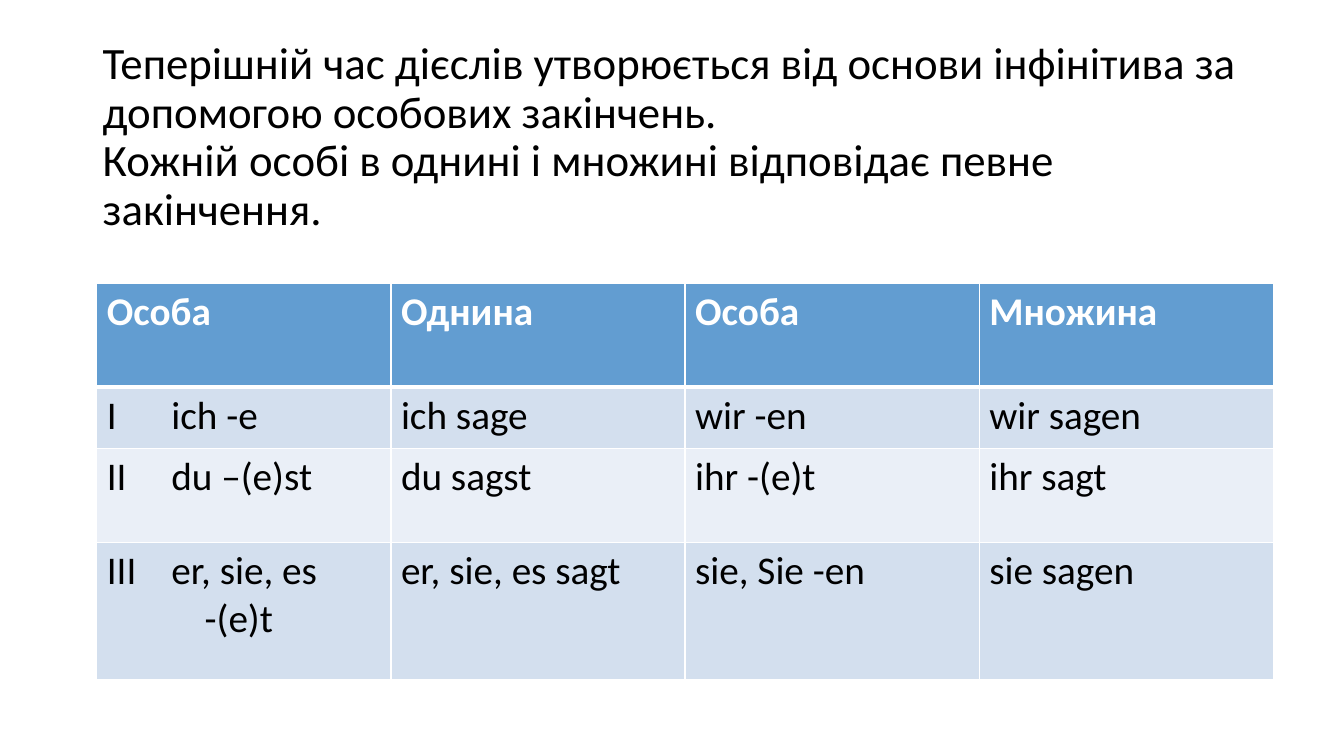
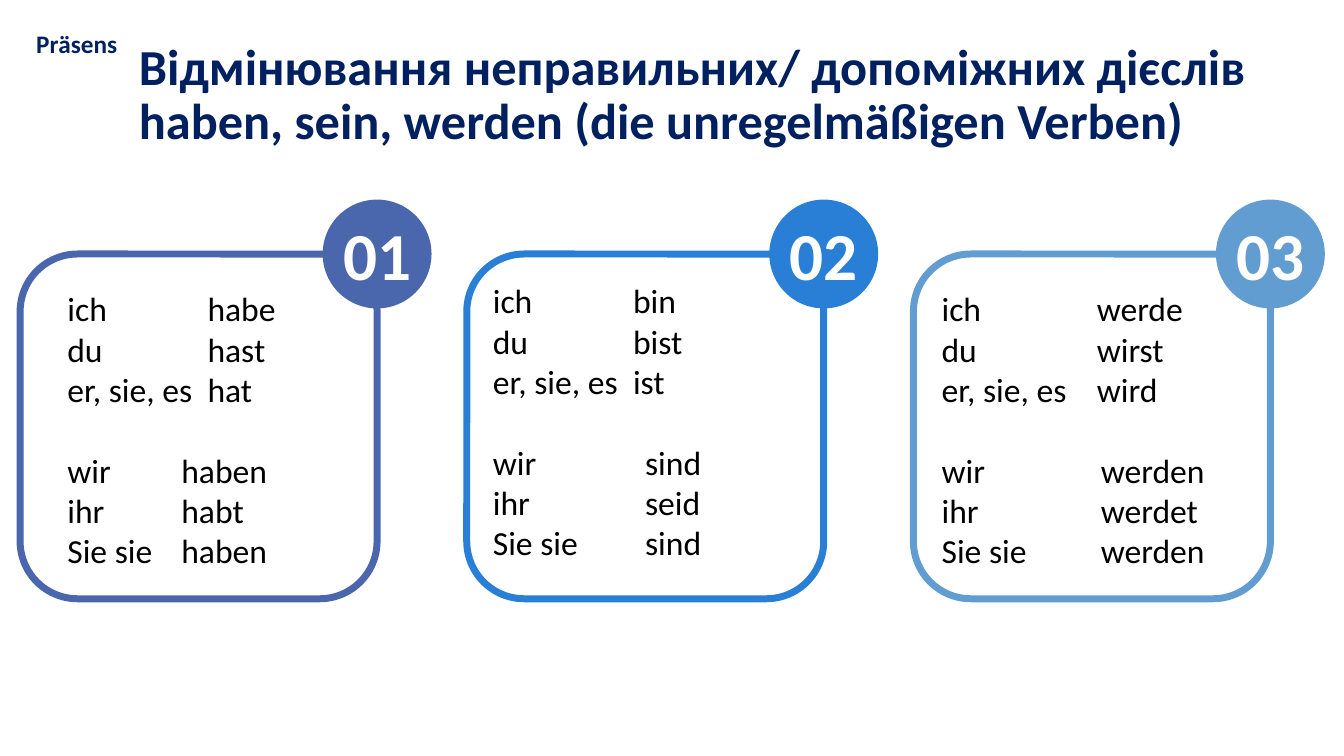
import pptx
import pptx.dml.color
import pptx.enum.shapes
import pptx.enum.text
import pptx.oxml
import pptx.oxml.ns
import pptx.util

RGBColor = pptx.dml.color.RGBColor
BLACK = RGBColor(0x00, 0x00, 0x00)
WHITE = RGBColor(0xFF, 0xFF, 0xFF)
NAVY = RGBColor(0x00, 0x20, 0x60)
INDIGO = RGBColor(0x4A, 0x66, 0xAC)
BLUE = RGBColor(0x29, 0x7F, 0xD5)
SKY = RGBColor(0x62, 0x9D, 0xD1)
BAND_DARK = RGBColor(0xD3, 0xDF, 0xEE)
BAND_LIGHT = RGBColor(0xEA, 0xEF, 0xF7)

PX = 9144  # 100 px to the inch
FONT = "Calibri"
MIDDLE = pptx.enum.text.MSO_ANCHOR.MIDDLE
CENTER = pptx.enum.text.PP_ALIGN.CENTER
SHAPES = pptx.enum.shapes.MSO_SHAPE


def px(*lengths):
    return [pptx.util.Emu(length * PX) for length in lengths]


class Deck:
    """Holds the shared style and the current slide."""

    def __init__(self, width, height):
        self.presentation = pptx.Presentation()
        self.presentation.slide_width, self.presentation.slide_height = px(width, height)
        self.slide = None

    def new_slide(self):
        self.slide = self.presentation.slides.add_slide(self.presentation.slide_layouts[6])

    def fill_text(self, frame, lines, size, color=BLACK, bold=False, **paragraph_format):
        """Each line is a text or a (text, tab stop, space before) tuple."""
        run_format = {"name": FONT, "size": pptx.util.Pt(size), "bold": bold}
        for index, line in enumerate(lines):
            text, tab, space = (line, None, 0) if isinstance(line, str) else line
            paragraph = frame.paragraphs[0] if index == 0 else frame.add_paragraph()
            paragraph.text = text
            if tab:
                self.tab_stop(paragraph, tab)
            if space:
                paragraph.space_before = pptx.util.Pt(space)
            for name, value in paragraph_format.items():
                setattr(paragraph, name, value)
            for run in paragraph.runs:
                for name, value in run_format.items():
                    setattr(run.font, name, value)
                run.font.color.rgb = color

    def tab_stop(self, paragraph, position):
        properties = paragraph._p.get_or_add_pPr()
        properties.append(pptx.oxml.parse_xml(
            f'<a:tabLst {pptx.oxml.ns.nsdecls("a")}>'
            f'<a:tab pos="{position * PX}" algn="l"/></a:tabLst>'))

    def text(self, box, lines, size, wrap=True, anchor=None, **style):
        frame = self.slide.shapes.add_textbox(*px(*box)).text_frame
        frame.word_wrap = wrap
        if anchor is not None:
            frame.vertical_anchor = anchor
        self.fill_text(frame, lines, size, **style)

    def title(self, box, text, size, **style):
        self.text(box, [text], size, anchor=MIDDLE, line_spacing=0.9, **style)

    def panel(self, box, color):
        shape = self.slide.shapes.add_shape(SHAPES.ROUNDED_RECTANGLE, *px(*box))
        shape.shadow.inherit = False
        shape.fill.background()
        shape.line.color.rgb = color
        shape.line.width = pptx.util.Pt(5)

    def badge(self, box, color, label):
        shape = self.slide.shapes.add_shape(SHAPES.OVAL, *px(*box))
        shape.shadow.inherit = False
        shape.fill.solid()
        shape.fill.fore_color.rgb = color
        shape.line.fill.background()
        frame_format = {"word_wrap": False, "vertical_anchor": MIDDLE, "margin_left": 0,
                        "margin_right": 0, "margin_top": 0, "margin_bottom": 0}
        for name, value in frame_format.items():
            setattr(shape.text_frame, name, value)
        self.fill_text(shape.text_frame, [label], 48, WHITE, True, alignment=CENTER)

    def cell_borders(self, cell, **widths):
        properties = cell._tc.get_or_add_tcPr()
        for side in "LRTB":
            width = pptx.util.Pt(widths.get(side, 1))
            properties.append(pptx.oxml.parse_xml(
                f'<a:ln{side} {pptx.oxml.ns.nsdecls("a")} w="{width}">'
                f'<a:solidFill><a:srgbClr val="{WHITE}"/></a:solidFill></a:ln{side}>'))

    def table(self, box, heights, rows):
        table = self.slide.shapes.add_table(len(rows), len(rows[0]), *px(*box)).table
        for row_index, (height, row) in enumerate(zip(heights, rows)):
            table.rows[row_index].height = px(height)[0]
            header = row_index == 0
            band = SKY if header else (BAND_LIGHT, BAND_DARK)[row_index % 2]
            heavy = {0: {"B": 3}, 1: {"T": 3}}.get(row_index, {})
            for column_index, lines in enumerate(row):
                cell = table.cell(row_index, column_index)
                self.cell_borders(cell, **heavy)
                cell.fill.solid()
                cell.fill.fore_color.rgb = band
                self.fill_text(cell.text_frame, lines if isinstance(lines, list) else [lines],
                               28, WHITE if header else BLACK, header)


def endings_slide(deck):
    deck.new_slide()
    deck.title((92, 40, 1150, 194),
               "Теперішній час дієслів утворюється від основи інфінітива за допомогою "
               "особових закінчень.\vКожній особі в однині і множині відповідає "
               "певне закінчення.", 32)
    pronoun_tab, ending_tab = 64, 97
    deck.table((96, 281, 1167, 393), (103, 61, 93, 136), [
        ["Особа", "Однина", "Особа", "Множина"],
        [[("I\tich -e", pronoun_tab, 0)], "ich sage", "wir -en", "wir sagen"],
        [[("II\tdu –(e)st", pronoun_tab, 0)], "du sagst", "ihr -(e)t", "ihr sagt"],
        [[("III\ter, sie, es", pronoun_tab, 0), ("\t-(e)t", ending_tab, 0)],
         "er, sie, es sagt", "sie, Sie -en", "sie sagen"],
    ])


def verbs_slide(deck):
    deck.new_slide()
    pronouns = ["ich", "du", "er, sie, es", "wir", "ihr", "Sie sie"]
    # Colour, text box, tab stops for singular and plural, verb forms
    verbs = [
        (INDIGO, (57, 281, 234, 293), (139, 113), "habe hast hat haben habt haben"),
        (BLUE, (479, 273, 354, 293), (139, 151), "bin bist ist sind seid sind"),
        (SKY, (924, 281, 328, 293), (154, 158), "werde wirst wird werden werdet werden"),
    ]
    for index, (color, box, tabs, forms) in enumerate(verbs):
        left = 20 + 443 * index
        deck.panel((left, 252, 354, 342), color)
        deck.badge((left + 300, 198, 108, 108), color, f"{index + 1:02}")
        lines = [(f"{pronoun}\t{form}", tabs[row // 3], 29 if row == 3 else 0)
                 for row, (pronoun, form) in enumerate(zip(pronouns, forms.split()))]
        deck.text(box, lines, 24)
    deck.title((128, 23, 1181, 145),
               "Відмінювання неправильних/ допоміжних дієслів haben, sein, werden "
               "(die unregelmäßigen Verben)", 36, color=NAVY, bold=True)
    deck.text((26, 23, 101, 40), ["Prӓsens"], 18, wrap=False, color=NAVY, bold=True)


def main():
    deck = Deck(1333, 750)
    endings_slide(deck)
    verbs_slide(deck)
    deck.presentation.save("out.pptx")


if __name__ == "__main__":
    main()
